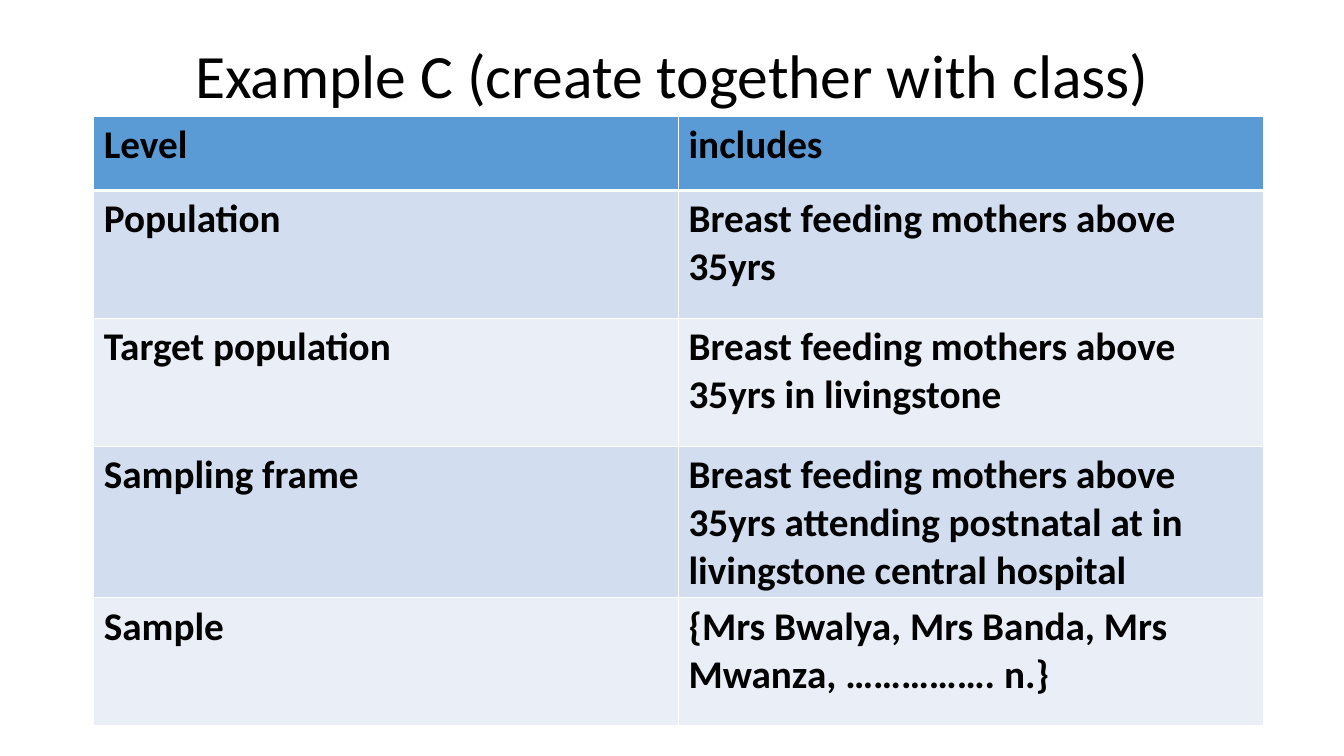
from lxml import etree
from pptx import Presentation
from pptx.dml.color import RGBColor
from pptx.enum.text import MSO_ANCHOR, PP_ALIGN
from pptx.oxml.ns import qn
from pptx.util import Inches, Pt

BOTTOM = MSO_ANCHOR.BOTTOM
CENTER = PP_ALIGN.CENTER

HEADER_FILL = "5B9BD5"
BAND_FILLS = ["D2DEEF", "EAEFF7"]
BORDER = "FFFFFF"
LEVELS = [
    ("Level", "includes"),
    ("Population", "Breast feeding mothers above 35yrs"),
    ("Target population", "Breast feeding mothers above 35yrs in livingstone"),
    ("Sampling frame", "Breast feeding mothers above 35yrs attending postnatal "
                       "at in livingstone central hospital"),
    ("Sample", "{Mrs Bwalya, Mrs Banda, Mrs Mwanza, ……………. n.}"),
]
HEADER_HEIGHT, ROW_HEIGHT, COLUMN_WIDTH = 0.74, 1.27, 5.8


def add_run(paragraph, text, size, bold=False):
    run = paragraph.add_run()
    run.text = text
    run.font.name = "Calibri"
    run.font.size = Pt(size)
    run.font.bold = bold
    run.font.color.rgb = RGBColor.from_string("000000")


def add_borders(cell, bottom_width):
    """Draw all four cell borders; call before filling, as lines precede the fill."""
    properties = cell._tc.get_or_add_tcPr()
    for side, width in (("L", 1), ("R", 1), ("T", 1), ("B", bottom_width)):
        line = etree.SubElement(properties, qn(f"a:ln{side}"), w=str(Pt(width)))
        solid = etree.SubElement(line, qn("a:solidFill"))
        etree.SubElement(solid, qn("a:srgbClr"), val=BORDER)


presentation = Presentation()
presentation.slide_width = Inches(13.33)
presentation.slide_height = Inches(7.5)
slide = presentation.slides.add_slide(presentation.slide_layouts[6])

heading = slide.shapes.add_textbox(
    Inches(1.67), Inches(0.29), Inches(10), Inches(0.87)).text_frame
heading.word_wrap = True
heading.vertical_anchor = BOTTOM
heading_line = heading.paragraphs[0]
heading_line.alignment = CENTER
heading_line.line_spacing = 0.9
add_run(heading_line, "Example C (create together with class)", 44)

levels_table = slide.shapes.add_table(
    len(LEVELS), 2, Inches(0.93), Inches(1.15), Inches(2 * COLUMN_WIDTH),
    Inches(HEADER_HEIGHT + 4 * ROW_HEIGHT)).table
for column in levels_table.columns:
    column.width = Inches(COLUMN_WIDTH)

for row, entries in enumerate(LEVELS):
    is_header = row == 0
    levels_table.rows[row].height = Inches(HEADER_HEIGHT if is_header else ROW_HEIGHT)
    fill = HEADER_FILL if is_header else BAND_FILLS[(row - 1) % 2]
    for column, entry in enumerate(entries):
        cell = levels_table.cell(row, column)
        add_borders(cell, 3 if is_header else 1)
        cell.fill.solid()
        cell.fill.fore_color.rgb = RGBColor.from_string(fill)
        add_run(cell.text_frame.paragraphs[0], entry, 28, bold=True)

presentation.save("out.pptx")
